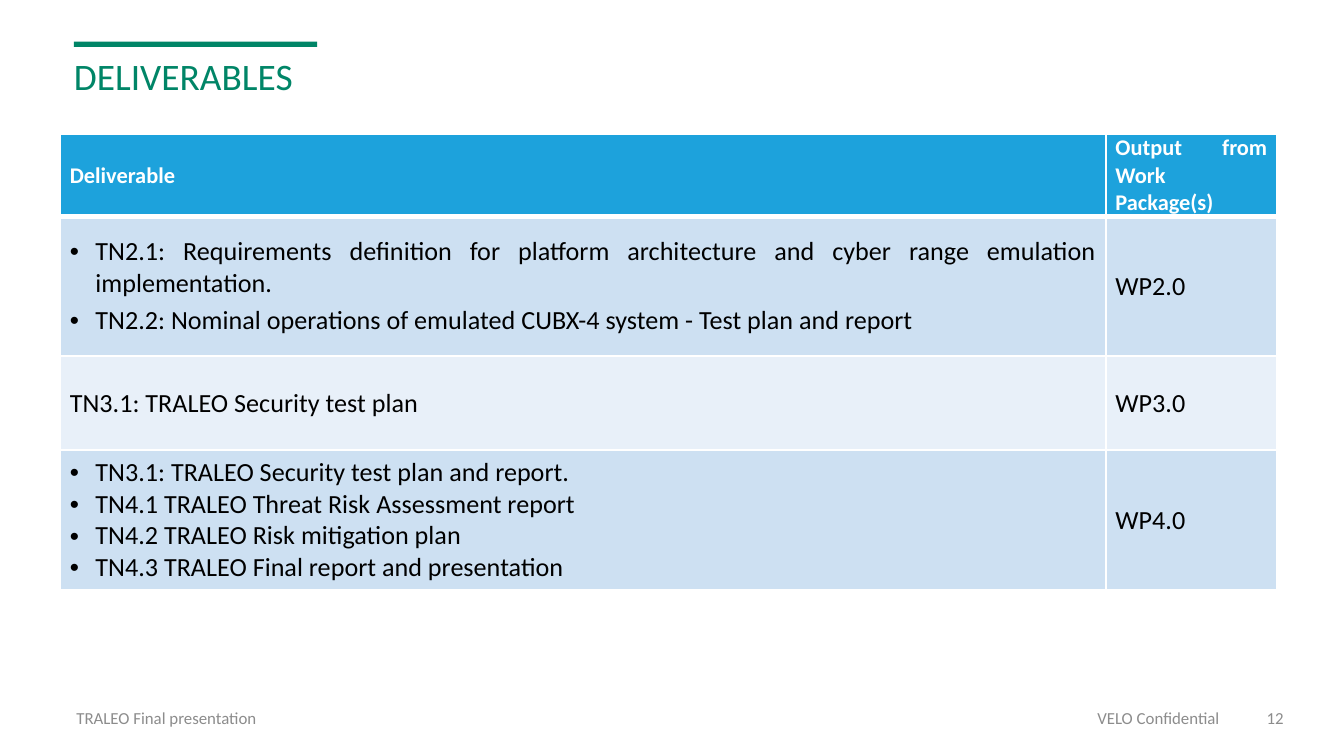
from dataclasses import dataclass

from lxml import etree
from pptx import Presentation
from pptx.dml.color import RGBColor
from pptx.enum.shapes import MSO_SHAPE
from pptx.enum.text import MSO_ANCHOR, MSO_AUTO_SIZE, PP_ALIGN
from pptx.oxml.ns import qn
from pptx.util import Pt

RECT = MSO_SHAPE.RECTANGLE
LEFT, RIGHT, JUST = PP_ALIGN.LEFT, PP_ALIGN.RIGHT, PP_ALIGN.JUSTIFY
TOP, MID = MSO_ANCHOR.TOP, MSO_ANCHOR.MIDDLE
FIXED = MSO_AUTO_SIZE.NONE
SCALE = 9144  # EMU per px, 100 px to the inch


@dataclass(frozen=True)
class Theme:
    font: str = "Calibri"
    green: str = "008567"
    gray: str = "8C8C8C"
    white: str = "FFFFFF"
    black: str = "000000"
    head: str = "1DA2DC"
    bands: tuple[str, str] = ("CDE0F2", "E8F0F9")
    title_size: int = 20
    head_size: int = 12
    cell_size: int = 14
    foot_size: int = 9


@dataclass(frozen=True)
class Foot:
    text: str
    left: int
    width: int
    align: PP_ALIGN


@dataclass(frozen=True)
class Row:
    items: tuple[str, ...]
    pack: str
    height: int
    gap: int = 0


THEME = Theme()

FEET = (
    Foot("TRALEO Final presentation", 47, 625, LEFT),
    Foot("VELO Confidential", 714, 203, RIGHT),
    Foot("12", 917, 48, RIGHT),
)

HEAD = Row(("Deliverable",), "Output from Work Package(s)", 61)
ROWS = (
    Row((
        "TN2.1: Requirements definition for platform architecture and cyber range "
        "emulation implementation.",
        "TN2.2: Nominal operations of emulated CUBX-4 system - Test plan and report",
    ), "WP2.0", 104, gap=3),
    Row(("TN3.1: TRALEO Security test plan",), "WP3.0", 70),
    Row((
        "TN3.1: TRALEO Security test plan and report.",
        "TN4.1 TRALEO Threat Risk Assessment report",
        "TN4.2 TRALEO Risk mitigation plan",
        "TN4.3 TRALEO Final report and presentation",
    ), "WP4.0", 104),
)
COLS = (778, 127)


def px(num: int) -> int:
    return num * SCALE


def add_dot(para) -> None:
    """Give a paragraph a round bullet with a hanging indent."""
    props = para._p.get_or_add_pPr()
    props.set("marL", str(px(19)))
    props.set("indent", str(-px(19)))
    etree.SubElement(props, qn("a:buFont")).set("typeface", "Arial")
    etree.SubElement(props, qn("a:buChar")).set("char", "•")


def write(frame, *lines: str, size: int, color: str, align: PP_ALIGN = LEFT,
          bold: bool = False, dots: bool = False, gap: int = 0,
          pitch: float = 1.0) -> None:
    """Fill a text frame, one paragraph a line."""
    frame.word_wrap = True
    for num, line in enumerate(lines):
        para = frame.add_paragraph() if num else frame.paragraphs[0]
        if dots:
            add_dot(para)
        para.alignment = align
        para.line_spacing = pitch
        para.space_before = Pt(gap if num else 0)
        run = para.add_run()
        run.text = line
        font = run.font
        font.name, font.size, font.bold = THEME.font, Pt(size), bold
        font.color.rgb = RGBColor.from_string(color)


def add_edge(cell, side: str, width: int) -> None:
    line = etree.SubElement(cell._tc.get_or_add_tcPr(), qn(f"a:ln{side}"), w=str(Pt(width)))
    fill = etree.SubElement(line, qn("a:solidFill"))
    etree.SubElement(fill, qn("a:srgbClr")).set("val", THEME.white)


def fill_cell(cell, *lines: str, fill: str, base: int, **form) -> None:
    """Set the edges, fill and text of one cell."""
    for side in "LRT":
        add_edge(cell, side, 1)
    add_edge(cell, "B", base)
    cell.fill.solid()
    cell.fill.fore_color.rgb = RGBColor.from_string(fill)
    cell.vertical_anchor = MID
    cell.margin_left = cell.margin_right = px(7)
    cell.margin_top = cell.margin_bottom = 0
    write(cell.text_frame, *lines, align=JUST, **form)


def add_title(slide) -> None:
    bar = slide.shapes.add_shape(RECT, px(55), px(31), px(181), px(4))
    bar.shadow.inherit = False
    bar.fill.solid()
    bar.fill.fore_color.rgb = RGBColor.from_string(THEME.green)
    bar.line.fill.background()
    title = slide.shapes.title
    title.left, title.top, title.width, title.height = map(px, (45, 38, 815, 59))
    frame = title.text_frame
    frame.auto_size = FIXED
    frame.vertical_anchor = TOP
    write(frame, "DELIVERABLES", size=THEME.title_size, color=THEME.green, pitch=0.9)


def add_foot(slide, foot: Foot) -> None:
    box = slide.shapes.add_textbox(px(foot.left), px(519), px(foot.width), px(30))
    box.text_frame.vertical_anchor = MID
    write(box.text_frame, foot.text, size=THEME.foot_size, color=THEME.gray, align=foot.align)


def add_grid(slide) -> None:
    rows = (HEAD, *ROWS)
    high = sum(row.height for row in rows)
    grid = slide.shapes.add_table(len(rows), len(COLS), px(45), px(100),
                                  px(sum(COLS)), px(high)).table
    for col, width in zip(grid.columns, COLS):
        col.width = px(width)
    for num, row in enumerate(rows):
        grid.rows[num].height = px(row.height)
        if row is HEAD:
            form = dict(fill=THEME.head, base=3, size=THEME.head_size,
                        color=THEME.white, bold=True)
        else:
            form = dict(fill=THEME.bands[(num - 1) % 2], base=1,
                        size=THEME.cell_size, color=THEME.black)
        fill_cell(grid.cell(num, 0), *row.items, dots=len(row.items) > 1,
                  gap=row.gap, **form)
        fill_cell(grid.cell(num, 1), row.pack, **form)


def main() -> None:
    deck = Presentation()
    # Wide format, 16 to 9
    deck.slide_width = px(1000)
    deck.slide_height = px(1000) * 9 // 16
    slide = deck.slides.add_slide(deck.slide_layouts[5])

    # Title and accent bar
    add_title(slide)

    # Footer line
    for foot in FEET:
        add_foot(slide, foot)

    # Table of deliverables
    add_grid(slide)

    deck.save("out.pptx")


if __name__ == "__main__":
    main()
